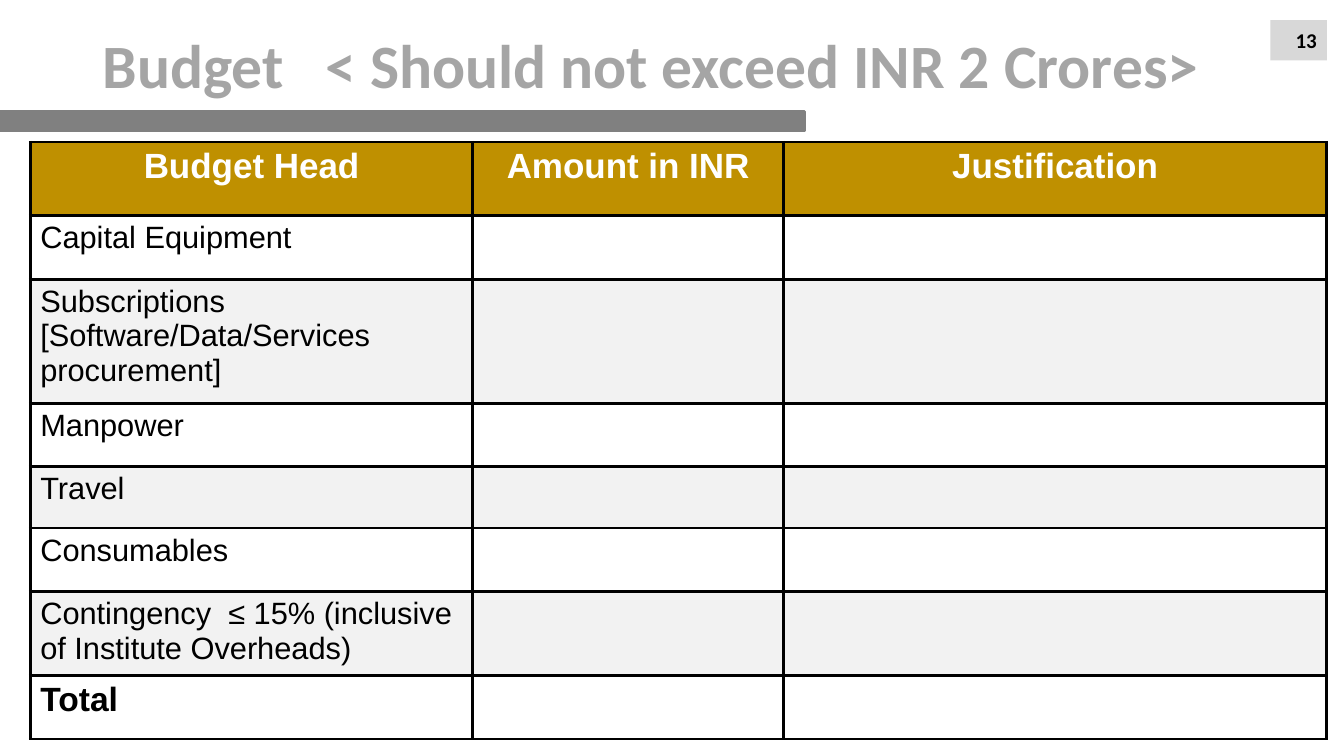
from lxml import etree
from pptx import Presentation
from pptx.dml.color import RGBColor
from pptx.enum.shapes import MSO_SHAPE
from pptx.enum.text import MSO_ANCHOR, PP_ALIGN
from pptx.oxml.ns import qn
from pptx.util import Inches, Pt

RECT = MSO_SHAPE.RECTANGLE
MIDDLE = MSO_ANCHOR.MIDDLE
LEFT, CENTER, RIGHT = PP_ALIGN.LEFT, PP_ALIGN.CENTER, PP_ALIGN.RIGHT

BLACK = RGBColor(0, 0, 0)
WHITE = RGBColor(0xFF, 0xFF, 0xFF)
GRAY = RGBColor(0x80, 0x80, 0x80)
SILVER = RGBColor(0xA5, 0xA5, 0xA5)
PALE = RGBColor(0xD8, 0xD8, 0xD8)
BAND = RGBColor(0xF2, 0xF2, 0xF2)
GOLD = RGBColor(0xBF, 0x90, 0x00)

COLS = [4.39, 3.08, 5.39]
HEADS = ["Budget Head", "Amount in INR", "Justification"]
ITEMS = [
    ("Capital Equipment", 0.63),
    ("Subscriptions\n[Software/Data/Services procurement]", 1.23),
    ("Manpower", 0.63),
    ("Travel", 0.61),
    ("Consumables", 0.63),
    ("Contingency  ≤ 15% (inclusive of Institute Overheads)", 0.78),
    ("Total", 0.63),
]
HEAD_HIGH = 0.73


def write(frame, text, size=22, font="Arial", color=BLACK, bold=False,
          align=LEFT, spacing=None):
    """Fill a text frame, one paragraph for each line of text."""
    frame.word_wrap = True
    frame.text = text
    for para in frame.paragraphs:
        para.alignment = align
        para.line_spacing = spacing
        para.font.size = Pt(size)
        for run in para.runs:
            run.font.size = Pt(size)
            run.font.name = font
            run.font.bold = bold
            run.font.color.rgb = color


def add_box(slide, left, top, width, height, fill, line=None):
    box = slide.shapes.add_shape(
        RECT, Inches(left), Inches(top), Inches(width), Inches(height))
    box.shadow.inherit = False
    box.fill.solid()
    box.fill.fore_color.rgb = fill
    if line is None:
        box.line.fill.background()
    else:
        box.line.color.rgb = line
        box.line.width = Pt(2)
    return box


def add_title(slide, text):
    box = slide.shapes.add_textbox(
        Inches(0.92), Inches(0.02), Inches(11.5), Inches(1.32))
    box.text_frame.vertical_anchor = MIDDLE
    write(box.text_frame, text, size=44, font="Calibri", color=SILVER,
          bold=True, spacing=0.9)


def add_number(slide, text):
    box = add_box(slide, 12.6, 0.2, 0.56, 0.4, PALE)
    box.text_frame.vertical_anchor = MIDDLE
    write(box.text_frame, text, size=15, font="Calibri", bold=True,
          align=RIGHT)


def set_border(cell):
    props = cell._tc.get_or_add_tcPr()
    for side in ("lnL", "lnR", "lnT", "lnB"):
        line = etree.SubElement(props, qn(f"a:{side}"), w=str(Pt(2.25)))
        fill = etree.SubElement(line, qn("a:solidFill"))
        etree.SubElement(fill, qn("a:srgbClr"), val=str(BLACK))


def style_cell(cell, text, fill, **style):
    set_border(cell)
    if fill is None:
        cell.fill.background()
    else:
        cell.fill.solid()
        cell.fill.fore_color.rgb = fill
    write(cell.text_frame, text, **style)


def add_budget(slide):
    highs = [HEAD_HIGH] + [high for _, high in ITEMS]
    frame = slide.shapes.add_table(
        len(highs), len(COLS), Inches(0.3), Inches(1.41),
        Inches(sum(COLS)), Inches(sum(highs)))
    table = frame.table
    for col, width in zip(table.columns, COLS):
        col.width = Inches(width)
    for row, high in zip(table.rows, highs):
        row.height = Inches(high)

    for col, head in enumerate(HEADS):
        style_cell(table.cell(0, col), head, GOLD, size=25, color=WHITE,
                   bold=True, align=CENTER)
    for row, (item, _) in enumerate(ITEMS, 1):
        fill = BAND if row % 2 == 0 else None
        last = row == len(ITEMS)
        for col in range(len(COLS)):
            style_cell(table.cell(row, col), item if col == 0 else "", fill,
                       size=24 if last else 22, bold=last)


def main():
    deck = Presentation()
    deck.slide_width = Inches(13.33)
    deck.slide_height = Inches(7.5)
    slide = deck.slides.add_slide(deck.slide_layouts[6])
    add_box(slide, 0, 1.11, 7.98, 0.19, GRAY, line=GRAY)
    add_title(slide, "Budget   < Should not exceed INR 2 Crores>")
    add_number(slide, "13")
    add_budget(slide)
    deck.save("out.pptx")


if __name__ == "__main__":
    main()
